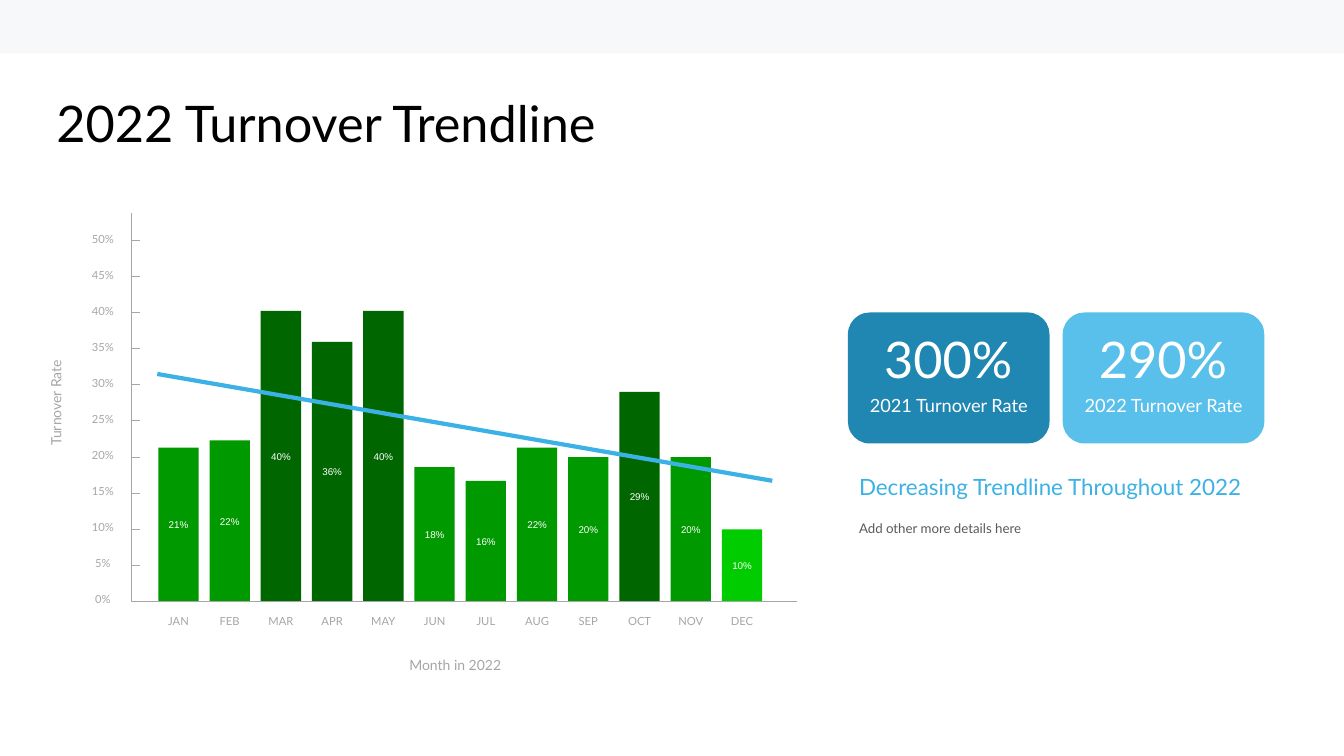
from pptx import Presentation
from pptx.dml.color import RGBColor
from pptx.enum.shapes import MSO_CONNECTOR, MSO_SHAPE
from pptx.enum.text import MSO_ANCHOR, PP_ALIGN
from pptx.oxml.ns import qn
from pptx.util import Inches, Pt
from lxml import etree

STRAIGHT = MSO_CONNECTOR.STRAIGHT
RECT, ROUNDED = MSO_SHAPE.RECTANGLE, MSO_SHAPE.ROUNDED_RECTANGLE
TOP, MIDDLE = MSO_ANCHOR.TOP, MSO_ANCHOR.MIDDLE
LEFT, CENTER = PP_ALIGN.LEFT, PP_ALIGN.CENTER

SLIDE_W, SLIDE_H = 13.33, 7.5
GREY, SKY, WHITE = "A6A6A6", "3CB1E5", "FFFFFF"
MID_GREEN, DARK_GREEN, LIGHT_GREEN = "009900", "006600", "00CC00"

# Chart grid: 12 month columns, 10 steps of 5% above the base line
AXIS_X, AXIS_RIGHT, AXIS_TOP, BASE_Y = 1.3, 7.9, 2.11, 5.97
FIRST_BAR, BAR_W, MONTH_STEP = 1.57, 0.4, 5.59 / 11
RATE_STEPS, TICK_STEP, TICK_W = 10, 3.59 / 10, 0.08
RATE_LABEL_Y, RATE_LABEL_STEP = 5.83, 3.57 / 10
HEIGHT_PER_PERCENT = TICK_STEP / 5

# Month, printed rate, plotted rate
MONTHLY_RATES = [
    ("JAN", "21%", 21.3), ("FEB", "22%", 22.3), ("MAR", "40%", 40.2),
    ("APR", "36%", 35.9), ("MAY", "40%", 40.2), ("JUN", "18%", 18.6),
    ("JUL", "16%", 16.7), ("AUG", "22%", 21.3), ("SEP", "20%", 20),
    ("OCT", "29%", 29), ("NOV", "20%", 20), ("DEC", "10%", 10),
]

# Left edge, fill, rate, caption
RATE_CARDS = [
    (8.41, "1F87B1", "300%", "2021 Turnover Rate"),
    (10.54, "59C0EB", "290%", "2022 Turnover Rate"),
]
CARD_Y, CARD_W, CARD_H = 3.1, 2, 1.3
DETAILS_X = 8.52


def rgb(hex_color):
    return RGBColor.from_string(hex_color)


def write(frame, text, size, color, font="Lato", align=LEFT, anchor=TOP,
          inset=(0.1, 0.05), spacing=None):
    across, down = Inches(inset[0]), Inches(inset[1])
    frame_format = {
        "word_wrap": True, "vertical_anchor": anchor,
        "margin_left": across, "margin_right": across,
        "margin_top": down, "margin_bottom": down,
    }
    for attribute, value in frame_format.items():
        setattr(frame, attribute, value)
    paragraph = frame.paragraphs[0]
    paragraph.alignment = align
    if spacing:
        paragraph.line_spacing = spacing
    run = paragraph.add_run()
    run.text = text
    for attribute, value in {"name": font, "size": Pt(size)}.items():
        setattr(run.font, attribute, value)
    run.font.color.rgb = rgb(color)


def add_label(slide, x, y, w, h, text, size, color, rotation=0, **text_format):
    label = slide.shapes.add_textbox(*map(Inches, (x, y, w, h)))
    label.rotation = rotation
    write(label.text_frame, text, size, color, **text_format)


def add_block(slide, kind, x, y, w, h, fill):
    block = slide.shapes.add_shape(kind, *map(Inches, (x, y, w, h)))
    block.shadow.inherit = False
    block.fill.solid()
    block.fill.fore_color.rgb = rgb(fill)
    block.line.fill.background()
    return block


def add_line(slide, x1, y1, x2, y2, color=GREY, width=0.5):
    line = slide.shapes.add_connector(STRAIGHT, *map(Inches, (x1, y1, x2, y2)))
    line.line.color.rgb = rgb(color)
    line.line.width = Pt(width)
    etree.SubElement(line._element.spPr, qn("a:effectLst"))


def bar_color(rate):
    if rate > 25:
        return DARK_GREEN
    return MID_GREEN if rate > 10 else LIGHT_GREEN


def add_axes(slide):
    add_line(slide, AXIS_X, BASE_Y, AXIS_RIGHT, BASE_Y)
    add_line(slide, AXIS_X, BASE_Y, AXIS_X, AXIS_TOP)
    for step in range(RATE_STEPS + 1):
        add_label(slide, 0.8, RATE_LABEL_Y - step * RATE_LABEL_STEP, 0.44, 0.24,
                  f"{step * 5}%", 8, GREY, align=CENTER)
        if step:
            tick_y = BASE_Y - step * TICK_STEP
            add_line(slide, AXIS_X + 0.01, tick_y, AXIS_X + 0.01 + TICK_W, tick_y)
    add_label(slide, 3.66, 6.46, 1.71, 0.27, "Month in 2022", 10, GREY, align=CENTER)
    add_label(slide, -0.3, 3.86, 1.71, 0.27, "Turnover Rate", 10, GREY,
              rotation=270, align=CENTER)


def add_month(slide, column, month, printed_rate, rate):
    bar_x = FIRST_BAR + column * MONTH_STEP
    height = rate * HEIGHT_PER_PERCENT
    bar = add_block(slide, RECT, bar_x, BASE_Y - height, BAR_W, height, bar_color(rate))
    write(bar.text_frame, printed_rate, 7, WHITE, font="Arial",
          align=CENTER, anchor=MIDDLE)
    add_label(slide, bar_x - 0.04, 6.05, BAR_W + 0.08, 0.24, month, 8, GREY, align=CENTER)


def add_rate_card(slide, x, fill, rate, caption):
    add_block(slide, ROUNDED, x, CARD_Y, CARD_W, CARD_H, fill)
    add_label(slide, x + 0.26, CARD_Y + 0.11, 1.49, 0.71, rate, 36, WHITE)
    add_label(slide, x + 0.05, CARD_Y + 0.76, 1.9, 0.32, caption, 13, WHITE, align=CENTER)


def main():
    deck = Presentation()
    deck.slide_width, deck.slide_height = Inches(SLIDE_W), Inches(SLIDE_H)
    slide = deck.slides.add_slide(deck.slide_layouts[6])

    add_block(slide, RECT, 0, 0, SLIDE_W, 0.53, "F7F8F9")
    add_label(slide, 0.56, 0.98, 6.5, 0.64, "2022 Turnover Trendline", 36, "000000",
              inset=(0, 0), spacing=0.9)

    for column, month_rate in enumerate(MONTHLY_RATES):
        add_month(slide, column, *month_rate)
    add_axes(slide)
    add_line(slide, 1.56, 3.71, 7.66, 4.77, SKY, 3)

    for card in RATE_CARDS:
        add_rate_card(slide, *card)
    add_label(slide, DETAILS_X, 4.69, 4.02, 0.34, "Decreasing Trendline Throughout 2022",
              16, SKY, inset=(0, 0))
    add_label(slide, DETAILS_X, 5.16, 1.77, 0.16, "Add other more details here",
              9.5, "595959", inset=(0, 0))

    deck.save("out.pptx")


if __name__ == "__main__":
    main()
